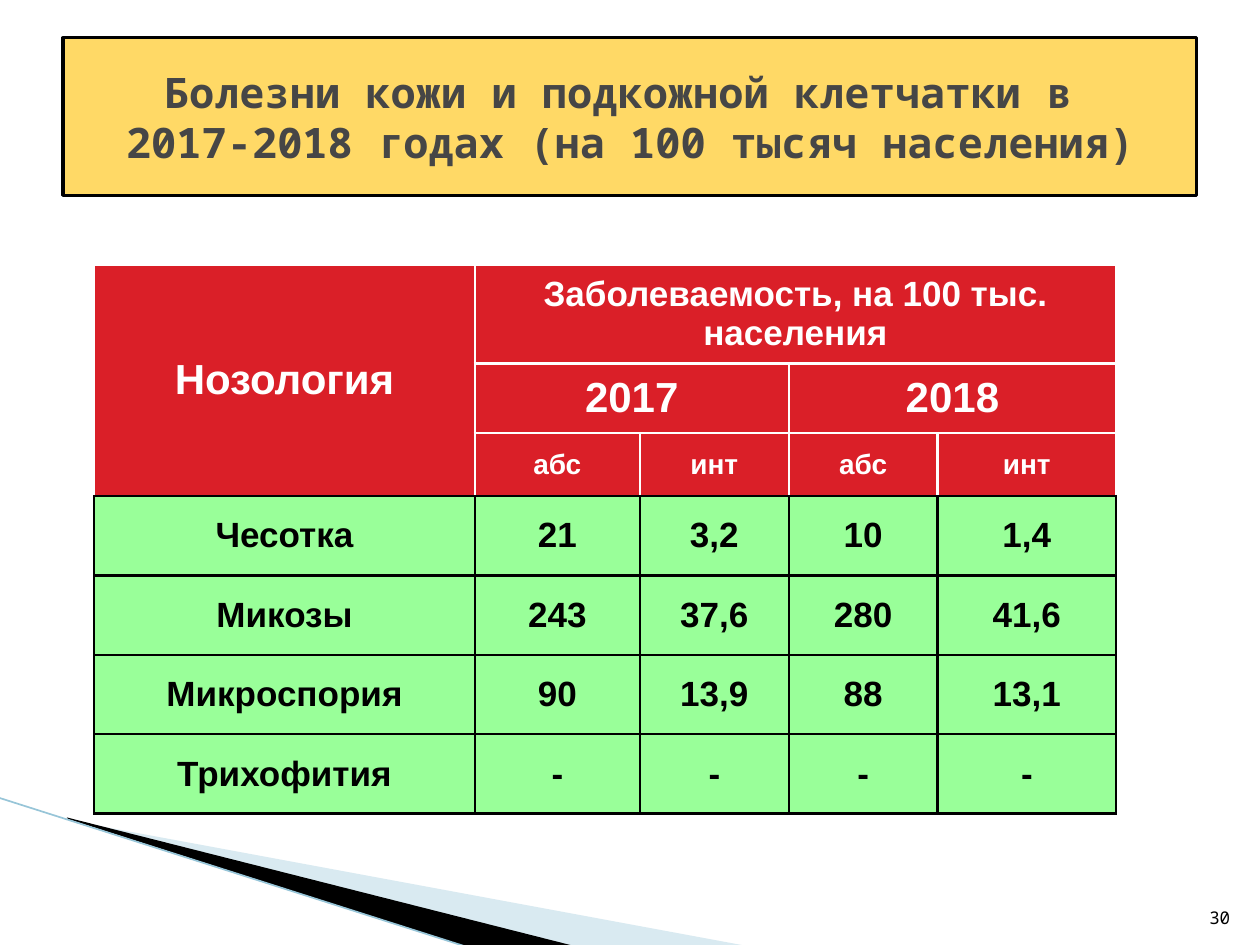
"""Build a slide with a table of skin disease rates for 2017-2018."""
from dataclasses import dataclass

from lxml import etree
from pptx import Presentation
from pptx.dml.color import RGBColor
from pptx.enum.shapes import MSO_CONNECTOR
from pptx.enum.text import MSO_ANCHOR, PP_ALIGN
from pptx.oxml.ns import qn
from pptx.util import Cm, Pt

MID, LOW = MSO_ANCHOR.MIDDLE, MSO_ANCHOR.BOTTOM
CENTER, RIGHT = PP_ALIGN.CENTER, PP_ALIGN.RIGHT
STRAIGHT = MSO_CONNECTOR.STRAIGHT


@dataclass(frozen=True)
class Theme:
    gold: str = "FFC000"
    gray: str = "464646"
    red: str = "DA1F28"
    green: str = "99FF99"
    sky: str = "A0CBDC"
    edge: str = "97C5D8"
    black: str = "000000"
    white: str = "FFFFFF"
    mono: str = "Noto Sans Mono"
    sans: str = "Arial"
    big: int = 24
    mid: int = 20
    small: int = 16
    tiny: int = 10


look = Theme()


def paint(fill, color, alpha=100):
    fill.solid()
    fill.fore_color.rgb = RGBColor.from_string(color)
    if alpha < 100:
        tone = fill._xPr.find(qn("a:solidFill"))[0]
        etree.SubElement(tone, qn("a:alpha"), val=str(alpha * 1000))


def write(para, text, face, size, color, bold=True, align=CENTER):
    para.alignment = align
    for i, part in enumerate(text.split("\n")):
        if i:
            para.add_line_break()
        run = para.add_run()
        run.text = part
        run.font.name = face
        run.font.size = Pt(size)
        run.font.bold = bold
        run.font.color.rgb = RGBColor.from_string(color)


deck = Presentation()
deck.slide_width, deck.slide_height = Cm(25.4), Cm(19.05)
slide = deck.slides.add_slide(deck.slide_layouts[5])
shapes = slide.shapes

wedges = [
    (look.sky, 40, [(1.4, 16.54), (15.11, 19.08), (11.58, 19.08), (1.4, 16.51)]),
    (look.black, 100, [(1.35, 16.48), (11.61, 19.08), (9.45, 19.1), (1.37, 16.51)]),
]
for color, alpha, spots in wedges:
    first, *rest = [(Cm(x), Cm(y)) for x, y in spots]
    path = shapes.build_freeform(*first)
    path.add_line_segments(rest)
    wedge = path.convert_to_shape()
    wedge.shadow.inherit = False
    paint(wedge.fill, color, alpha)
    wedge.line.fill.background()

rim = shapes.add_connector(STRAIGHT, Cm(-0.03), Cm(16.08), Cm(9.45), Cm(19.1))
rim.line.color.rgb = RGBColor.from_string(look.edge)
rim.line.width = Pt(0.95)
etree.SubElement(rim._element.spPr, qn("a:effectLst"))

title = shapes.title
title.left, title.top, title.width, title.height = Cm(1.27), Cm(0.76), Cm(22.86), Cm(3.18)
paint(title.fill, look.gold, 60)
title.line.color.rgb = RGBColor.from_string(look.black)
title.line.width = Pt(1.75)
title.text_frame.vertical_anchor = MID
write(title.text_frame.paragraphs[0],
      "Болезни кожи и подкожной клетчатки в \n2017-2018 годах (на 100 тысяч населения)",
      look.mono, look.big, look.gray)

page = shapes.add_textbox(Cm(24.03), Cm(17.81), Cm(1.02), Cm(1.02)).text_frame
page.word_wrap = True
page.vertical_anchor = LOW
write(page.paragraphs[0], "30", look.mono, look.tiny, look.black, False, RIGHT)

rows = [
    ["Нозология", "Заболеваемость, на 100 тыс. населения", "", "", ""],
    ["", "2017", "", "2018", ""],
    ["", "абс", "инт", "абс", "инт"],
    ["Чесотка", "21", "3,2", "10", "1,4"],
    ["Микозы", "243", "37,6", "280", "41,6"],
    ["Микроспория", "90", "13,9", "88", "13,1"],
    ["Трихофития", "-", "-", "-", "-"],
]
wide = [7.67, 3.33, 3, 3, 3.6]
high = [2, 1.4, 1.14] + [1.6] * 4
sizes = [look.mid, look.big, look.small] + [look.mid] * 4
grid = shapes.add_table(len(rows), len(wide), Cm(1.9), Cm(5.33),
                        Cm(sum(wide)), Cm(sum(high))).table
for col, width in zip(grid.columns, wide):
    col.width = Cm(width)
for row, height in zip(grid.rows, high):
    row.height = Cm(height)
for top, left, low, right in [(0, 0, 2, 0), (0, 1, 0, 4), (1, 1, 1, 2), (1, 3, 1, 4)]:
    grid.cell(top, left).merge(grid.cell(low, right))

for r, row in enumerate(rows):
    head = r < 3
    for c, text in enumerate(row):
        cell = grid.cell(r, c)
        cell.vertical_anchor = MID
        props = cell._tc.get_or_add_tcPr()
        for side in "LRTB":
            dark = not head or (side == "B" and (r == 2 or c == 0))
            line = etree.SubElement(props, qn("a:ln" + side), w=str(Pt(1.5)))
            fill = etree.SubElement(line, qn("a:solidFill"))
            etree.SubElement(fill, qn("a:srgbClr"), val=look.black if dark else look.white)
        paint(cell.fill, look.red if head else look.green)
        if text:
            size = look.big if r == c == 0 else sizes[r]
            write(cell.text_frame.paragraphs[0], text, look.sans, size,
                  look.white if head else look.black)

deck.save("out.pptx")
